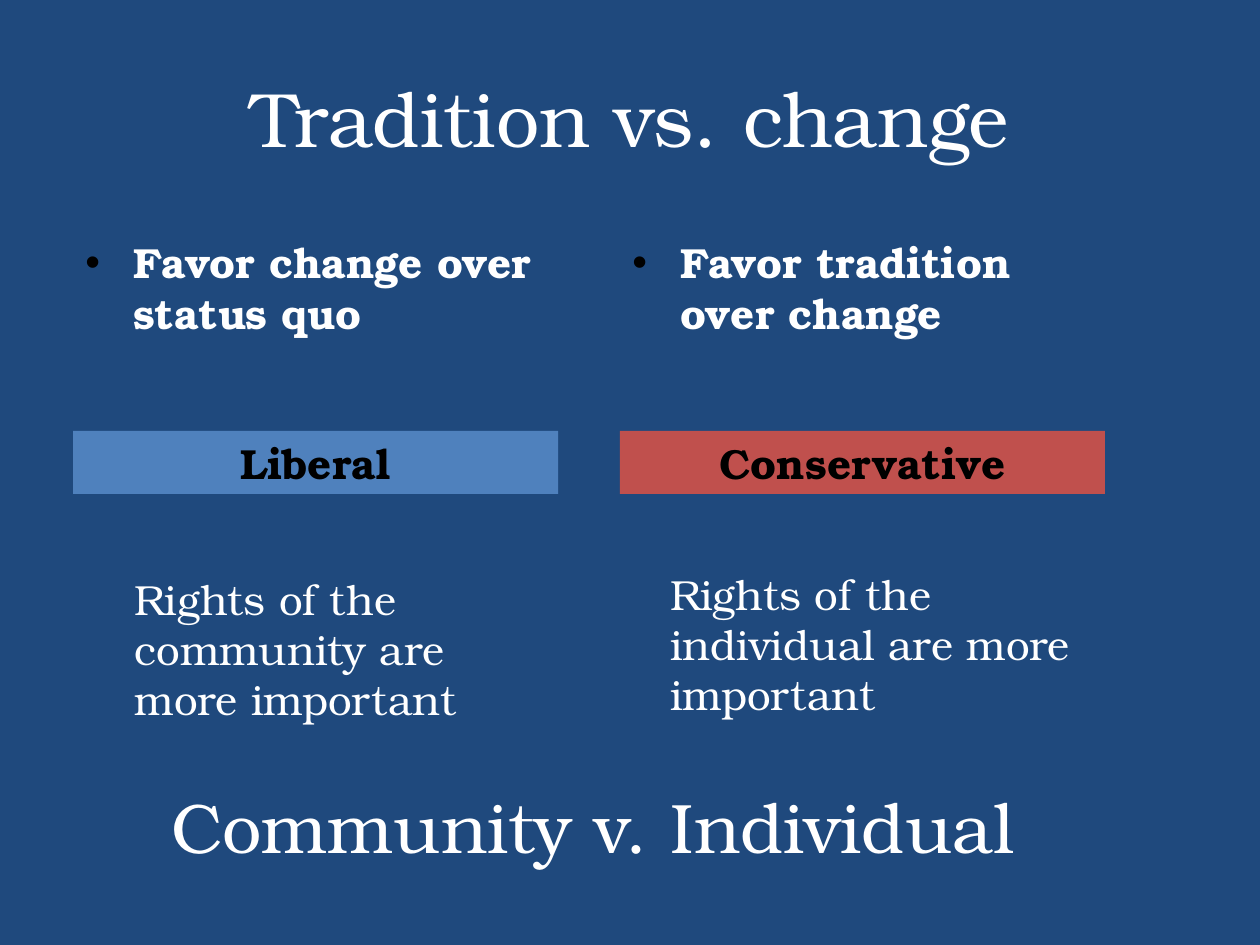
"""Build a slide that sets liberal views beside conservative ones."""
import pptx
import pptx.dml.color
import pptx.enum.shapes
import pptx.enum.text
import pptx.util
from lxml import etree

INCH = pptx.util.Inches
ALIGN = pptx.enum.text.PP_ALIGN
ANCHOR = pptx.enum.text.MSO_ANCHOR
FONT = "TeX Gyre Bonum"
HUES = {"back": "1F497D", "text": "FFFFFF", "dark": "000000",
        "left": "4F81BD", "right": "C0504D"}


def tint(key):
    return pptx.dml.color.RGBColor.from_string(HUES[key])


def write(shape, text, size, hue="text", bold=False, align=ALIGN.CENTER,
          anchor=ANCHOR.TOP, indent=0, bullet=None):
    frame = shape.text_frame
    frame.text = text
    frame.word_wrap = True
    frame.vertical_anchor = anchor
    para = frame.paragraphs[0]
    para.alignment = align
    font = para.runs[0].font
    font.name, font.size, font.bold = FONT, pptx.util.Pt(size), bold
    font.color.rgb = tint(hue)
    if indent:
        props = para._p.get_or_add_pPr()
        props.set("marL", str(INCH(indent)))
        props.set("indent", str(-INCH(indent) if bullet else 0))
        if bullet:
            space = pptx.oxml.ns.qn
            paint = etree.SubElement(props, space("a:buClr"))
            etree.SubElement(paint, space("a:srgbClr"), val=HUES["dark"])
            etree.SubElement(props, space("a:buFont"), typeface="Arial")
            etree.SubElement(props, space("a:buChar"), char=bullet)


deck = pptx.Presentation()
deck.slide_width, deck.slide_height = INCH(10), INCH(7.5)
slide = deck.slides.add_slide(deck.slide_layouts[5])
slide.background.fill.solid()
slide.background.fill.fore_color.rgb = tint("back")
shapes = slide.shapes

title = shapes.title
title.left, title.top, title.width, title.height = map(INCH, (0.5, 0.3, 9, 1.25))
write(title, "Tradition vs. change", 44, anchor=ANCHOR.MIDDLE)

START, STEP, WIDE, TALL = 0.58, 4.34, 3.85, 1.4
sides = [
    ("left", "Liberal", "Favor change over status quo",
     "Rights of the community are more important", 0.67, 4.5),
    ("right", "Conservative", "Favor tradition over change",
     "Rights of the individual are more important", 4.92, 4.46),
]
for col, (hue, name, favor, rights, left, top) in enumerate(sides):
    edge = START + col * STEP
    band = shapes.add_shape(pptx.enum.shapes.MSO_SHAPE.RECTANGLE,
                            *map(INCH, (edge, 3.42, WIDE, 0.5)))
    band.shadow.inherit = False
    band.fill.solid()
    band.fill.fore_color.rgb = tint(hue)
    band.line.fill.background()
    write(band, name, 24, "dark", True, anchor=ANCHOR.BOTTOM)

    point = shapes.add_textbox(*map(INCH, (edge, 1.83, WIDE, TALL)))
    write(point, favor, 24, bold=True, align=ALIGN.LEFT, indent=0.38, bullet="•")

    claim = shapes.add_textbox(*map(INCH, (left, top, WIDE, TALL)))
    write(claim, rights, 24, align=ALIGN.LEFT, indent=0.3)

motto = shapes.add_textbox(*map(INCH, (1.08, 6.17, 7.25, 0.84)))
write(motto, "Community v. Individual", 40)

deck.save("out.pptx")
